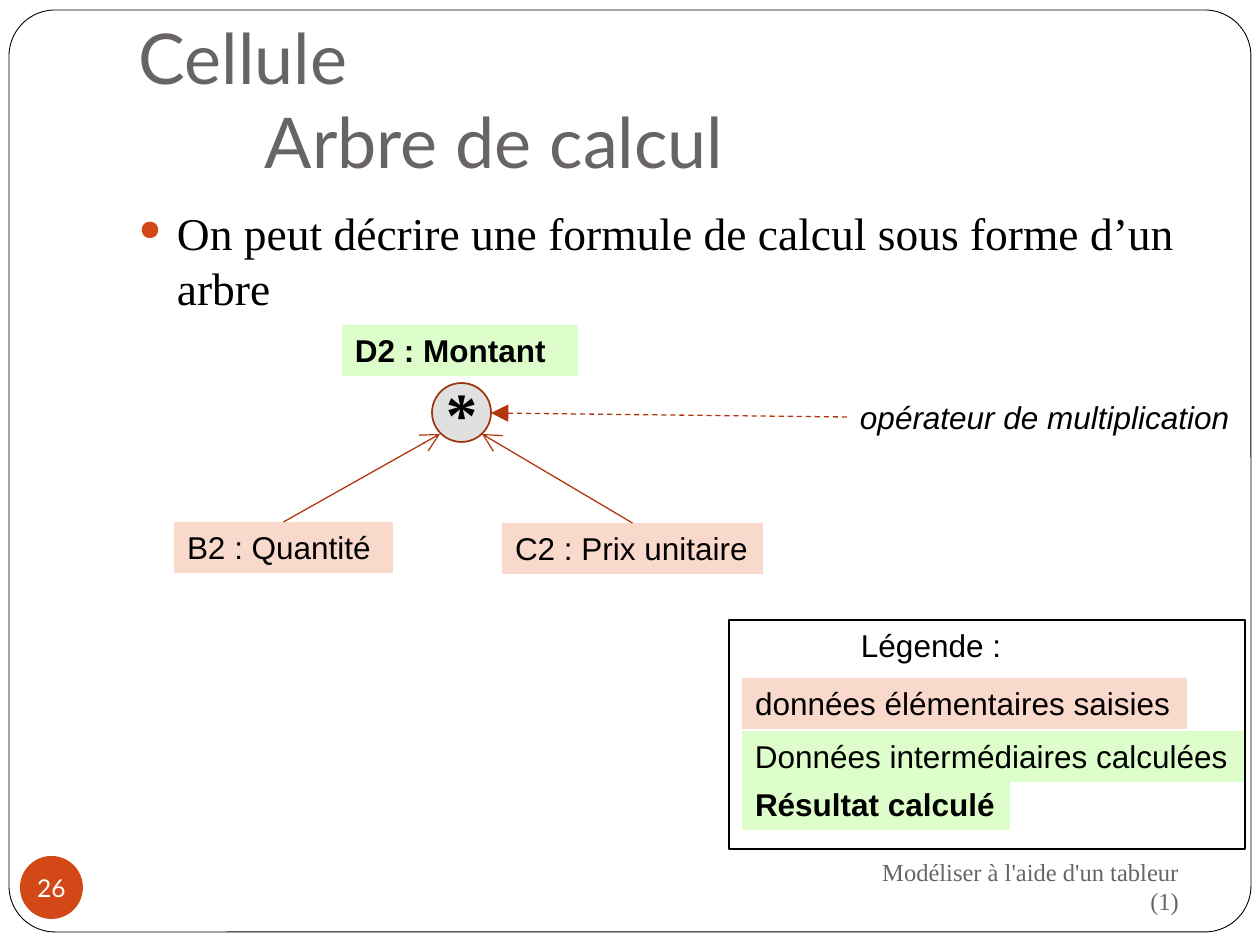
from dataclasses import dataclass

from lxml import etree
from pptx import Presentation
from pptx.dml.color import RGBColor
from pptx.enum.dml import MSO_LINE
from pptx.enum.shapes import MSO_CONNECTOR, MSO_SHAPE
from pptx.enum.text import MSO_ANCHOR, MSO_AUTO_SIZE, PP_ALIGN
from pptx.oxml.ns import qn
from pptx.util import Emu, Pt

RECT, OVAL, ROUND = MSO_SHAPE.RECTANGLE, MSO_SHAPE.OVAL, MSO_SHAPE.ROUNDED_RECTANGLE
LEFT, MID, RIGHT = PP_ALIGN.LEFT, PP_ALIGN.CENTER, PP_ALIGN.RIGHT
TOP, CENTER, BOTTOM = MSO_ANCHOR.TOP, MSO_ANCHOR.MIDDLE, MSO_ANCHOR.BOTTOM
NOFIT = MSO_AUTO_SIZE.NONE
STRAIGHT, DASH = MSO_CONNECTOR.STRAIGHT, MSO_LINE.DASH
SCALE = 914400 / 126


@dataclass(frozen=True)
class Theme:
    white: str = "FFFFFF"
    black: str = "000000"
    gray: str = "696464"
    accent: str = "D34817"
    input: str = "FAD9CD"
    result: str = "DDFECA"
    node: str = "E1E0E0"
    ring: str = "9C3511"
    arrow: str = "B1360B"
    sans: str = "Arial"
    head: str = "Lato"
    serif: str = "Times New Roman"
    small: int = 14
    label: int = 18
    body: int = 26
    sign: int = 36
    title: int = 40


@dataclass(frozen=True)
class Box:
    x: int
    y: int
    w: int
    h: int


@dataclass(frozen=True)
class Style:
    font: str
    size: int
    color: str
    bold: bool = False
    ital: bool = False
    align: PP_ALIGN = LEFT
    anchor: MSO_ANCHOR = TOP


@dataclass(frozen=True)
class Label:
    text: str
    box: Box
    fill: str | None
    bold: bool = False
    ital: bool = False


THEME = Theme()
ROW = 51


def px(n: int) -> Emu:
    return Emu(round(n * SCALE))


def rgb(code: str) -> RGBColor:
    return RGBColor.from_string(code)


def place(shape, box: Box) -> None:
    shape.left, shape.top = px(box.x), px(box.y)
    shape.width, shape.height = px(box.w), px(box.h)


def write(shape, text: str, style: Style, pad: tuple = (13, 6, 13, 6)):
    frame = shape.text_frame
    frame.text = text
    frame.word_wrap = True
    frame.auto_size = NOFIT
    frame.vertical_anchor = style.anchor
    frame.margin_left, frame.margin_top, frame.margin_right, frame.margin_bottom = map(px, pad)
    para = frame.paragraphs[0]
    para.alignment = style.align
    font = para.font
    font.name, font.size = style.font, Pt(style.size)
    font.bold, font.italic = style.bold, style.ital
    font.color.rgb = rgb(style.color)
    return para


def draw(slide, kind, box: Box, fill: str | None = None, line: str | None = None, width: float = 1):
    shape = slide.shapes.add_shape(kind, px(box.x), px(box.y), px(box.w), px(box.h))
    shape.shadow.inherit = False
    if fill:
        shape.fill.solid()
        shape.fill.fore_color.rgb = rgb(fill)
    else:
        shape.fill.background()
    if line:
        shape.line.color.rgb = rgb(line)
        shape.line.width = Pt(width)
    else:
        shape.line.fill.background()
    return shape


def note(slide, text: str, box: Box, style: Style):
    area = slide.shapes.add_textbox(px(box.x), px(box.y), px(box.w), px(box.h))
    return write(area, text, style)


def tag(slide, item: Label):
    style = Style(THEME.sans, THEME.label, THEME.black, item.bold, item.ital)
    if item.fill is None:
        return note(slide, item.text, item.box, style)
    shape = draw(slide, RECT, item.box, item.fill)
    write(shape, item.text, style)
    return shape


def link(slide, start: tuple, end: tuple, head: str, source=None, dash: bool = False) -> None:
    line = slide.shapes.add_connector(STRAIGHT, *map(px, start + end))
    if source is not None:
        line.begin_connect(source, 0)
    line.line.color.rgb = rgb(THEME.arrow)
    line.line.width = Pt(0.75)
    if dash:
        line.line.dash_style = DASH
    etree.SubElement(line.line._get_or_add_ln(), qn("a:tailEnd"), type=head, w="lg", len="lg")
    etree.SubElement(line._element.spPr, qn("a:effectLst"))


def bullet(para) -> None:
    para.space_before = Pt(5.8)
    props = para._p.get_or_add_pPr()
    props.set("marL", str(px(38)))
    props.set("indent", str(-px(38)))
    color = etree.SubElement(props, qn("a:buClr"))
    etree.SubElement(color, qn("a:srgbClr"), val=THEME.accent)
    etree.SubElement(props, qn("a:buSzPct"), val="62000")
    etree.SubElement(props, qn("a:buChar"), char="●")
    props.append(props.find(qn("a:defRPr")))


def main() -> None:
    deck = Presentation()
    deck.slide_width, deck.slide_height = px(1260), px(945)
    slide = deck.slides.add_slide(deck.slide_layouts[5])

    frame = draw(slide, ROUND, Box(9, 10, 1242, 922), THEME.white, THEME.black, 0.5)
    frame.adjustments[0] = 0.05
    title = slide.shapes.title
    title._element.addprevious(frame._element)
    place(title, Box(126, 39, 1071, 157))
    head = write(title, "Cellule\v\tArbre de calcul",
                 Style(THEME.head, THEME.title, THEME.gray, anchor=BOTTOM), (13, 6, 13, 13))
    props = head._p.get_or_add_pPr()
    tabs = etree.Element(qn("a:tabLst"))
    etree.SubElement(tabs, qn("a:tab"), pos=str(px(126)), algn="l")
    props.find(qn("a:defRPr")).addprevious(tabs)

    bullet(note(slide, "On peut décrire une formule de calcul sous forme d’un arbre",
                Box(126, 199, 1134, 630), Style(THEME.serif, THEME.body, THEME.black)))
    note(slide, "Modéliser à l'aide d'un tableur (1)", Box(851, 853, 341, 66),
         Style(THEME.serif, THEME.small, THEME.gray, align=RIGHT, anchor=CENTER))
    badge = draw(slide, OVAL, Box(20, 856, 63, 63), THEME.accent)
    write(badge, "26", Style(THEME.head, THEME.small, THEME.white, align=MID, anchor=CENTER), (0,) * 4)

    tag(slide, Label("D2 : Montant", Box(342, 325, 236, ROW), THEME.result, bold=True))
    count = tag(slide, Label("B2 : Quantité", Box(174, 522, 219, ROW), THEME.input))
    price = tag(slide, Label("C2 : Prix unitaire", Box(502, 523, 261, ROW), THEME.input))
    node = draw(slide, OVAL, Box(432, 383, 59, 59), THEME.node, THEME.ring)
    write(node, "*", Style(THEME.serif, THEME.sign, THEME.black, True, align=MID, anchor=CENTER), (0,) * 4)
    link(slide, (284, 522), (440, 434), "arrow", count)
    link(slide, (633, 523), (482, 434), "arrow", price)

    legend = (
        Label("données élémentaires saisies", Box(742, 678, 445, ROW), THEME.input),
        Label("Données intermédiaires calculées", Box(742, 731, 503, ROW), THEME.result),
        Label("Résultat calculé", Box(742, 779, 268, ROW), THEME.result, bold=True),
        Label("Légende :", Box(848, 620, 190, ROW), None),
    )
    for item in legend:
        tag(slide, item)
    draw(slide, RECT, Box(729, 620, 516, 229), line=THEME.black)

    tag(slide, Label("opérateur de multiplication", Box(847, 392, 398, ROW), None, ital=True))
    link(slide, (847, 417), (491, 413), "triangle", dash=True)
    deck.save("out.pptx")


if __name__ == "__main__":
    main()
